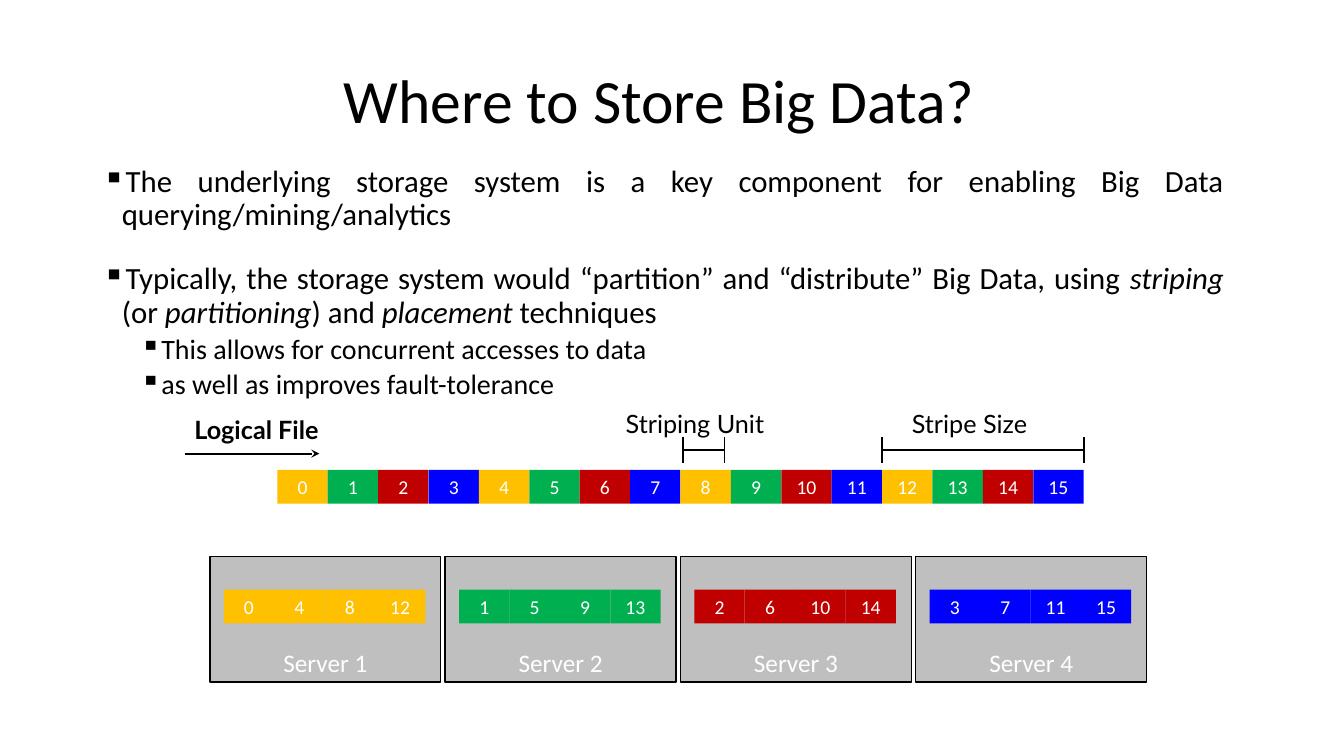
import dataclasses

import lxml.etree
import pptx
import pptx.dml.color
import pptx.enum.shapes
import pptx.enum.text
import pptx.oxml.ns
import pptx.util

Cm = pptx.util.Cm
Pt = pptx.util.Pt
Align = pptx.enum.text.PP_ALIGN
Anchor = pptx.enum.text.MSO_ANCHOR


@dataclasses.dataclass(frozen=True)
class Theme:
    ink: str = "000000"
    light: str = "FFFFFF"
    server: str = "BFBFBF"
    stripes: tuple = ("FFC000", "00B050", "C00000", "0000FF")
    font: str = "Calibri"
    label_font: str = "Lato"
    title: int = 44
    body: int = 22
    sub: int = 20
    label: int = 18
    block: int = 14


THEME = Theme()
TITLE = "Where to Store Big Data?"
BULLETS = [
    (0, 0, [("The underlying storage system is a key component for enabling "
             "Big Data querying/mining/analytics", False)]),
    (0, 22, [("Typically, the storage system would “partition” and “distribute” "
              "Big Data, using ", False),
             ("striping", True), (" (or ", False), ("partitioning", True),
             (") and ", False), ("placement", True), (" techniques", False)]),
    (1, 3.8, [("This allows for concurrent accesses to data", False)]),
    (1, 3.8, [("as well as improves fault-tolerance", False)]),
]
LABELS = [
    ("Logical File", 4.65, 10.31, 4.04, True),
    ("Stripe Size", 22.73, 10.16, 3.71, False),
    ("Striping Unit", 15.52, 10.16, 4.01, False),
]
BLOCK_COUNT = 16
SERVER_COUNT = len(THEME.stripes)
BLOCK_WIDTH, BLOCK_HEIGHT = 1.27, 0.85
FILE_LEFT, FILE_TOP = 6.99, 11.84
SERVER_LEFT, SERVER_TOP, SERVER_PITCH = 5.29, 14.02, 5.93
SERVER_WIDTH, SERVER_HEIGHT = 5.82, 3.17
STORED_INSET, STORED_TOP = 0.35, 14.86
BRACKET_Y, TICK_HALF = 11.34, 0.33
STRIPE_END = FILE_LEFT + BLOCK_COUNT * BLOCK_WIDTH
STRIPE_START = STRIPE_END - SERVER_COUNT * BLOCK_WIDTH
BRACKETS = [(STRIPE_START, STRIPE_END), (17.22, 18.26)]


def rgb(value):
    return pptx.dml.color.RGBColor.from_string(value)


def write(para, text, size, color=THEME.ink, font=THEME.font, bold=False, italic=False,
          align=None):
    if align is not None:
        para.alignment = align
    span = para.add_run()
    span.text = text
    span.font.size = Pt(size)
    span.font.name = font
    span.font.bold = bold
    span.font.italic = italic
    span.font.color.rgb = rgb(color)


def add_child(parent, tag, **attributes):
    return lxml.etree.SubElement(parent, pptx.oxml.ns.qn(tag), attributes)


def add_rectangle(page, text, left, top, width, height, fill, size, anchor, border=None):
    box = page.shapes.add_shape(pptx.enum.shapes.MSO_SHAPE.RECTANGLE,
                                Cm(left), Cm(top), Cm(width), Cm(height))
    box.shadow.inherit = False
    box.fill.solid()
    box.fill.fore_color.rgb = rgb(fill)
    if border:
        box.line.color.rgb = rgb(border)
        box.line.width = Pt(1)
    else:
        box.line.fill.background()
    box.text_frame.vertical_anchor = anchor
    write(box.text_frame.paragraphs[0], text, size, color=THEME.light, align=Align.CENTER)


def add_block(page, number, left, top):
    add_rectangle(page, str(number), left, top, BLOCK_WIDTH, BLOCK_HEIGHT,
                  THEME.stripes[number % SERVER_COUNT], THEME.block, Anchor.MIDDLE)


def add_line(page, x1, y1, x2, y2, width=1.25, arrow=False):
    line = page.shapes.add_connector(pptx.enum.shapes.MSO_CONNECTOR.STRAIGHT,
                                     Cm(x1), Cm(y1), Cm(x2), Cm(y2))
    line.line.color.rgb = rgb(THEME.ink)
    line.line.width = Pt(width)
    if arrow:
        add_child(line.line._get_or_add_ln(), "a:tailEnd", type="stealth")
    add_child(line._element.spPr, "a:effectLst")


def add_title(page):
    title = page.shapes.title
    title.left, title.top, title.width, title.height = Cm(4.87), Cm(0.76), Cm(23.5), Cm(3.68)
    title.text_frame.vertical_anchor = Anchor.MIDDLE
    para = title.text_frame.paragraphs[0]
    para.line_spacing = 0.9
    write(para, TITLE, THEME.title, align=Align.CENTER)


def add_bullets(page):
    frame = page.shapes.add_textbox(Cm(2.34), Cm(4.06), Cm(28.75), Cm(12.57)).text_frame
    frame.word_wrap = True
    for index, (level, space, spans) in enumerate(BULLETS):
        para = frame.add_paragraph() if index else frame.paragraphs[0]
        properties = para._p.get_or_add_pPr()
        properties.set("marL", str(Cm(0.48 + 0.95 * level)))
        properties.set("indent", str(-Cm(0.48)))
        add_child(properties, "a:buChar", char="▪")
        para.level = level
        para.line_spacing = 0.9
        para.space_before = Pt(space)
        for text, italic in spans:
            write(para, text, THEME.sub if level else THEME.body, italic=italic,
                  align=Align.JUSTIFY)


def add_labels(page):
    for text, left, top, width, bold in LABELS:
        frame = page.shapes.add_textbox(Cm(left), Cm(top), Cm(width), Cm(1.02)).text_frame
        frame.word_wrap = False
        frame.auto_size = pptx.enum.text.MSO_AUTO_SIZE.SHAPE_TO_FIT_TEXT
        write(frame.paragraphs[0], text, THEME.label, font=THEME.label_font, bold=bold)


def add_logical_file(page):
    for number in range(BLOCK_COUNT):
        add_block(page, number, FILE_LEFT + number * BLOCK_WIDTH, FILE_TOP)
    add_line(page, 4.65, 11.43, 8.05, 11.43, width=1.5, arrow=True)
    for start, end in BRACKETS:
        add_line(page, start, BRACKET_Y, end, BRACKET_Y)
        for x in (start, end):
            add_line(page, x, BRACKET_Y - TICK_HALF, x, BRACKET_Y + TICK_HALF)


def add_servers(page):
    for server in range(SERVER_COUNT):
        left = SERVER_LEFT + server * SERVER_PITCH
        add_rectangle(page, f"Server {server + 1}", left, SERVER_TOP, SERVER_WIDTH,
                      SERVER_HEIGHT, THEME.server, THEME.label, Anchor.BOTTOM,
                      border=THEME.ink)
        for slot, number in enumerate(range(server, BLOCK_COUNT, SERVER_COUNT)):
            add_block(page, number, left + STORED_INSET + slot * BLOCK_WIDTH, STORED_TOP)


def main():
    deck = pptx.Presentation()
    deck.slide_width, deck.slide_height = Cm(33.87), Cm(19.05)
    page = deck.slides.add_slide(deck.slide_layouts[5])
    add_title(page)
    add_bullets(page)
    add_logical_file(page)
    add_labels(page)
    add_servers(page)
    deck.save("out.pptx")


if __name__ == "__main__":
    main()
